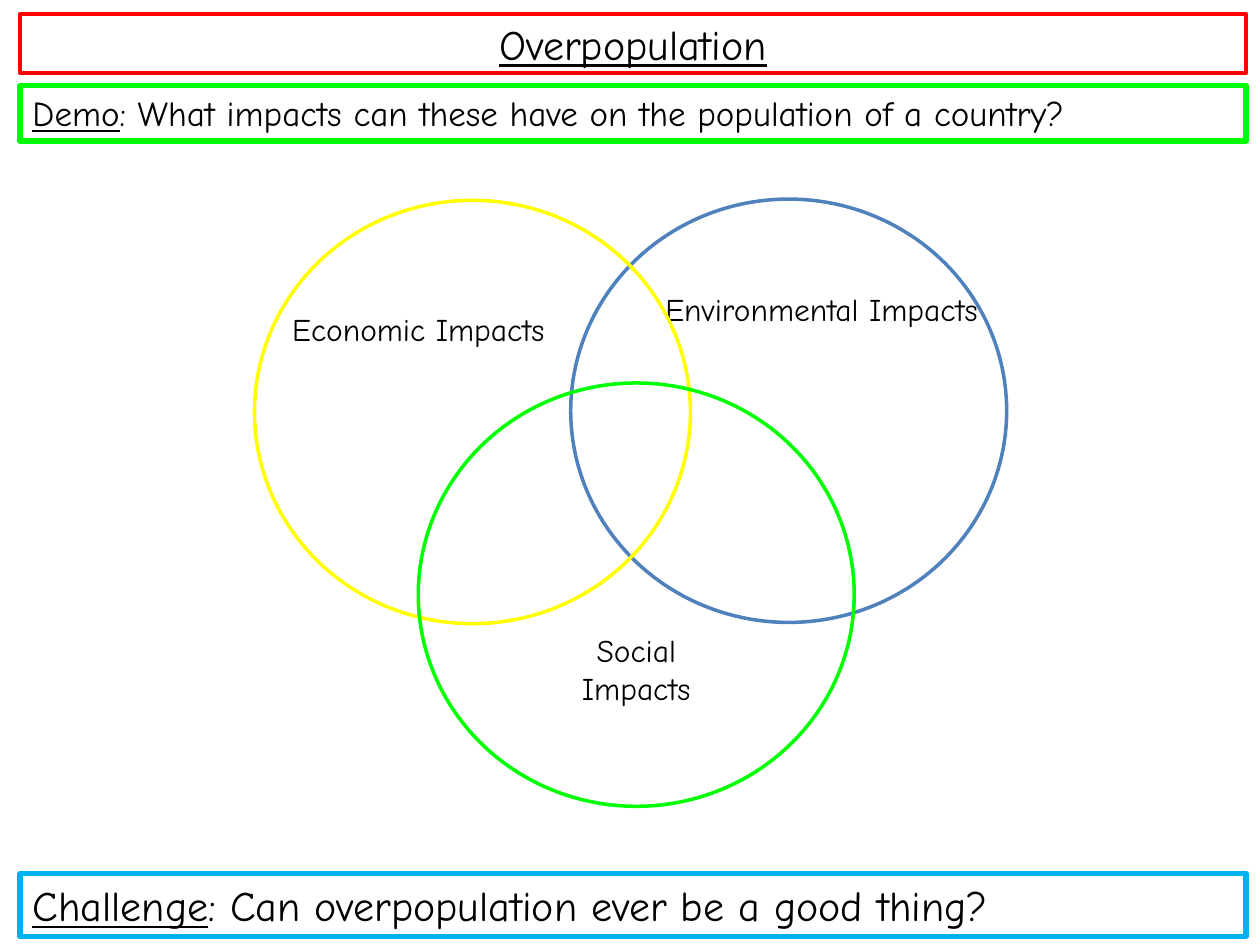
from typing import NamedTuple
from pptx import Presentation
from pptx.dml.color import RGBColor
from pptx.enum.shapes import MSO_SHAPE as Kind
from pptx.enum.text import MSO_ANCHOR as Anchor, PP_ALIGN as Align
from pptx.util import Inches, Pt

FONT = "Comic Neue"
BLACK, WHITE = "000000", "FFFFFF"


# Lengths are percent of the slide's width (left, wide) or height (top, high)
class Bar(NamedTuple):
    top: float
    high: float
    line: str
    weight: float
    size: int
    head: str
    rest: str = ""
    fill: str = ""
    align: Align = Align.LEFT
    anchor: Anchor = Anchor.TOP


class Ring(NamedTuple):
    left: float
    top: float
    line: str


class Label(NamedTuple):
    left: float
    top: float
    wide: float
    high: float
    text: str


BAR_LEFT, BAR_WIDE = 1.6, 97.3
RING_WIDE, RING_HIGH = 34.6, 44.8

TITLE = Bar(1.47, 6.27, "FF0000", 2.25, 24, "Overpopulation",
            align=Align.CENTER, anchor=Anchor.MIDDLE)
DEMO = Bar(9.07, 5.87, "00FF00", 3, 20, "Demo",
           ": What impacts can these have on the population of a country?", WHITE)
FINAL = Bar(92.4, 6.67, "00B0F0", 3, 24, "Challenge",
            ": Can overpopulation ever be a good thing?", WHITE)
BLUE = Ring(45.3, 21.07, "4F81BD")
YELLOW = Ring(20.2, 21.2, "FFFF00")
GREEN = Ring(33.2, 40.53, "00FF00")
LABELS = [
    Label(51.8, 30, 26.8, 9.47, "Environmental Impacts"),
    Label(41.8, 66.13, 17.4, 9.47, "Social Impacts"),
    Label(20.6, 32.13, 25.2, 5.33, "Economic Impacts"),
]

deck = Presentation()
deck.slide_width, deck.slide_height = Inches(10), Inches(7.5)
slide = deck.slides.add_slide(deck.slide_layouts[6])


def tint(code: str) -> RGBColor:
    return RGBColor.from_string(code)


def area(left: float, top: float, wide: float, high: float) -> list[int]:
    full = (deck.slide_width, deck.slide_height) * 2
    return [round(part * side / 100) for part, side in zip((left, top, wide, high), full)]


def write(shape, runs: list, size: int, align: Align, anchor: Anchor) -> None:
    """Fill a shape with one paragraph of (text, underline) runs."""
    frame = shape.text_frame
    frame.word_wrap, frame.vertical_anchor = True, anchor
    para = frame.paragraphs[0]
    para.alignment = align
    for text, under in runs:
        run = para.add_run()
        run.text = text
        look = {"name": FONT, "size": Pt(size), "underline": under}
        for key, value in look.items():
            setattr(run.font, key, value)
        run.font.color.rgb = tint(BLACK)


def outline(kind: Kind, box: list[int], line: str, weight: float, fill: str = ""):
    shape = slide.shapes.add_shape(kind, *box)
    shape.shadow.inherit = False
    shape.line.color.rgb = tint(line)
    shape.line.width = Pt(weight)
    if fill:
        shape.fill.solid()
        shape.fill.fore_color.rgb = tint(fill)
    else:
        shape.fill.background()
    return shape


def draw_bar(bar: Bar) -> None:
    box = area(BAR_LEFT, bar.top, BAR_WIDE, bar.high)
    shape = outline(Kind.RECTANGLE, box, bar.line, bar.weight, bar.fill)
    runs = [(bar.head, True)] + ([(bar.rest, False)] if bar.rest else [])
    write(shape, runs, bar.size, bar.align, bar.anchor)


def draw_ring(ring: Ring) -> None:
    outline(Kind.OVAL, area(ring.left, ring.top, RING_WIDE, RING_HIGH), ring.line, 2)


def draw_label(label: Label) -> None:
    box = slide.shapes.add_textbox(*area(*label[:4]))
    write(box, [(label.text, False)], 18, Align.CENTER, Anchor.TOP)


# Title and starter question
draw_bar(TITLE)
draw_bar(DEMO)

# Venn diagram, with the labels above the blue ring and below the others
draw_ring(BLUE)
for label in LABELS:
    draw_label(label)

# Closing question
draw_bar(FINAL)

# Front rings
draw_ring(YELLOW)
draw_ring(GREEN)

deck.save("out.pptx")
